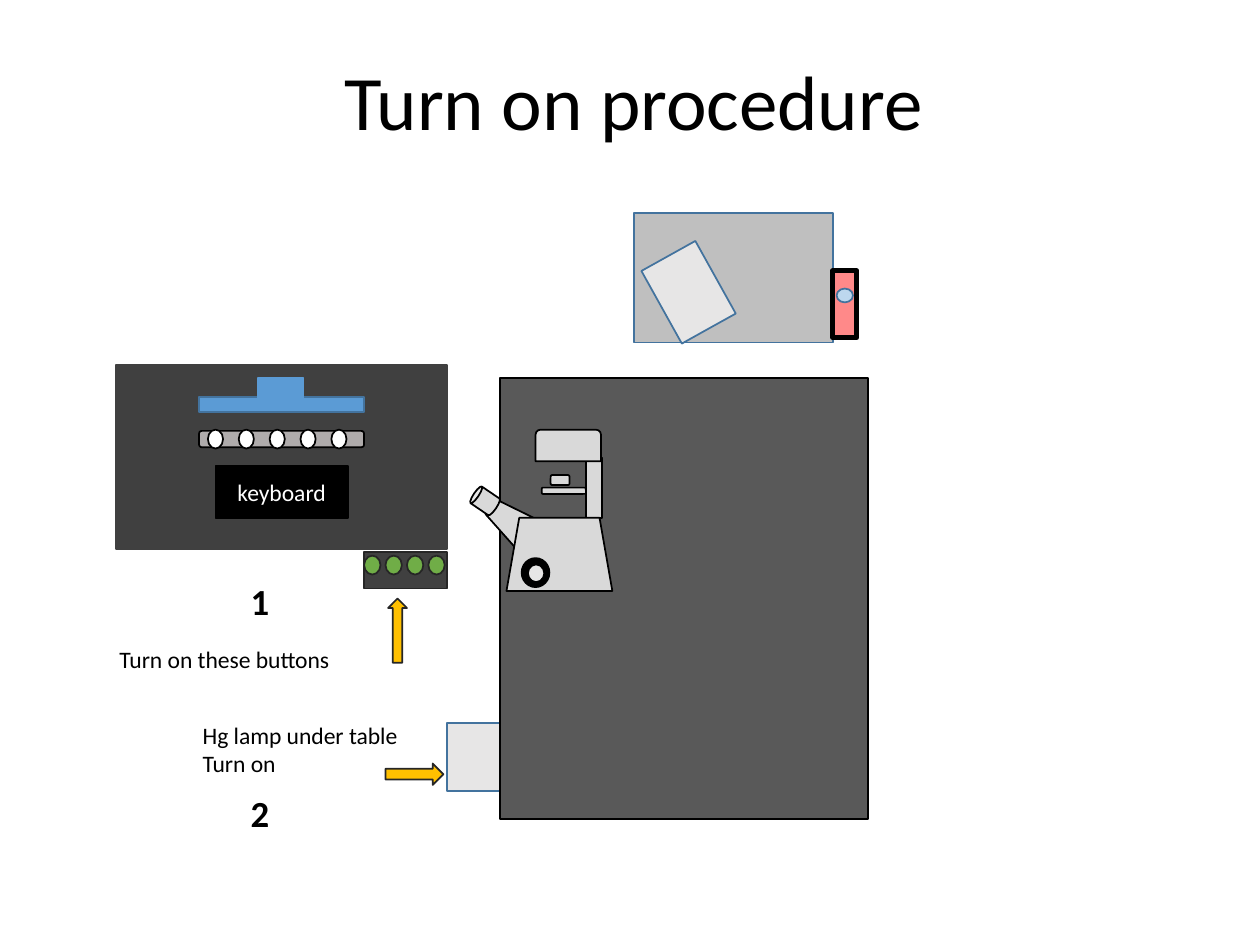
from pptx import Presentation
from pptx import util as u
from pptx.dml.color import RGBColor
from pptx.enum import shapes, text

COLOURS = {
    "black": "000000", "white": "FFFFFF", "ink": "262626", "desk": "404040",
    "table": "595959", "cabinet": "BFBFBF", "pale": "E7E6E6", "body": "D9D9D9",
    "strip": "AFABAB", "blue": "5B9BD5", "edge": "43739E", "sky": "BDD7EE",
    "red": "FF8989", "green": "70AD47", "amber": "FFC000",
}
KINDS = shapes.MSO_SHAPE
RECT, ROUND, OVAL = KINDS.RECTANGLE, KINDS.ROUNDED_RECTANGLE, KINDS.OVAL
PROCESS, ARROW = KINDS.FLOWCHART_PROCESS, KINDS.RIGHT_ARROW

# Each part: kind, (left, top, width, height) in inches, fill, line, extra format
FURNITURE = [
    (RECT, (3.55, 5.74, 0.59, 0.54), "pale", "edge", {}),         # lamp
    (RECT, (5.03, 1.69, 1.58, 1.03), "cabinet", "edge", {}),
    (RECT, (3.97, 3.0, 2.92, 3.5), "table", "black", {}),
    (RECT, (0.92, 2.9, 2.63, 1.46), "desk", "desk", {}),
    (RECT, (1.58, 3.15, 1.31, 0.12), "blue", "edge", {}),         # monitor
    (RECT, (1.71, 3.7, 1.05, 0.41), "black", "black", {"label": "keyboard"}),
    (ROUND, (1.58, 3.42, 1.31, 0.13), "strip", "black", {}),
    (RECT, (2.05, 3.0, 0.36, 0.16), "blue", "blue", {}),
]
MICROSCOPE = [
    (KINDS.TRAPEZOID, (3.9, 3.95, 0.29, 0.37), "body", "black", {"rotation": 307.3}),
    (KINDS.CAN, (3.77, 3.87, 0.16, 0.21), "body", "black", {"rotation": 304.2}),
    (PROCESS, (4.65, 3.63, 0.13, 0.48), "body", "black", {}),
    (KINDS.ROUND_2_SAME_RECTANGLE, (4.25, 3.41, 0.52, 0.25), "body", "black", {}),
    (ROUND, (4.3, 3.87, 0.35, 0.05), "body", "black", {}),
    (ROUND, (4.37, 3.77, 0.15, 0.08), "body", "black", {}),
    (KINDS.TRAPEZOID, (4.02, 4.11, 0.84, 0.58), "body", "black", {"adjust": 0.175}),
    (OVAL, (4.14, 4.43, 0.22, 0.23), "black", "black", {}),
    (OVAL, (4.19, 4.48, 0.13, 0.14), "pale", "black", {}),
]
SWITCHES = [
    (PROCESS, (6.61, 2.15, 0.19, 0.53), "red", "black", {"weight": 3}),
    (OVAL, (6.64, 2.29, 0.13, 0.11), "sky", "edge", {}),
    (RECT, (5.22, 1.99, 0.49, 0.66), "pale", "edge", {"rotation": 330.9}),
    (ARROW, (2.9, 4.93, 0.51, 0.15), "amber", "ink", {"rotation": 270}),
    (ARROW, (3.06, 6.06, 0.46, 0.17), "amber", "ink", {}),
    (PROCESS, (2.89, 4.38, 0.66, 0.29), "desk", "ink", {}),
]
# Rows of equal parts: kind, first box, step, count, fill, line
ROWS = [
    (OVAL, (1.65, 3.41, 0.12, 0.15), 0.245, 5, "white", "black"),
    (KINDS.FLOWCHART_CONNECTOR, (2.89, 4.41, 0.13, 0.15), 0.17, 4, "green", "ink"),
]
NOTES = [
    (["Turn on these buttons"], (0.85, 5.07, 2.24, 0.43), {}),
    (["Hg lamp under table", "Turn on"], (1.51, 5.67, 2.09, 0.73), {}),
    (["1"], (1.89, 4.54, 0.35, 0.45), {"size": 21, "bold": True}),
    (["2"], (1.89, 6.23, 0.35, 0.45), {"size": 21, "bold": True}),
]


def colour(name):
    return RGBColor.from_string(COLOURS[name])


def inches(place):
    return [u.Inches(length) for length in place]


def write(frame, lines, size=13.5, ink="black", bold=False,
          align=text.PP_ALIGN.LEFT, anchor=text.MSO_ANCHOR.TOP, spacing=None):
    frame.word_wrap = True
    frame.vertical_anchor = anchor
    for number, line in enumerate(lines):
        para = frame.add_paragraph() if number else frame.paragraphs[0]
        para.alignment = align
        para.line_spacing = spacing
        span = para.add_run()
        span.text = line
        span.font.name = "Calibri"
        span.font.size = u.Pt(size)
        span.font.bold = bold
        span.font.color.rgb = colour(ink)


def draw(page, kind, place, fill, line, weight=1, rotation=0, adjust=None, label=None):
    part = page.shapes.add_shape(kind, *inches(place))
    part.shadow.inherit = False
    part.fill.solid()
    part.fill.fore_color.rgb = colour(fill)
    part.line.color.rgb = colour(line)
    part.line.width = u.Pt(weight)
    part.rotation = rotation
    if adjust is not None:
        part.adjustments[0] = adjust
    if label:
        write(part.text_frame, [label], ink="white",
              align=text.PP_ALIGN.CENTER, anchor=text.MSO_ANCHOR.MIDDLE)


def main():
    deck = Presentation()
    deck.slide_width, deck.slide_height = u.Inches(10), u.Inches(7.5)
    page = deck.slides.add_slide(deck.slide_layouts[5])

    # Title
    title = page.shapes.title
    title.left, title.top, title.width, title.height = inches((0.72, 0.11, 8.62, 1.45))
    write(title.text_frame, ["Turn on procedure"], size=44, spacing=0.9,
          align=text.PP_ALIGN.CENTER, anchor=text.MSO_ANCHOR.MIDDLE)

    # Room plan, from back to front
    for kind, place, fill, line, extra in FURNITURE + MICROSCOPE + SWITCHES:
        draw(page, kind, place, fill, line, **extra)

    # Knobs and green buttons
    for kind, (left, top, width, height), step, count, fill, line in ROWS:
        for number in range(count):
            draw(page, kind, (left + number * step, top, width, height), fill, line)

    # Instructions and step numbers
    for lines, place, extra in NOTES:
        box = page.shapes.add_textbox(*inches(place))
        write(box.text_frame, lines, **extra)

    deck.save("out.pptx")


if __name__ == "__main__":
    main()
